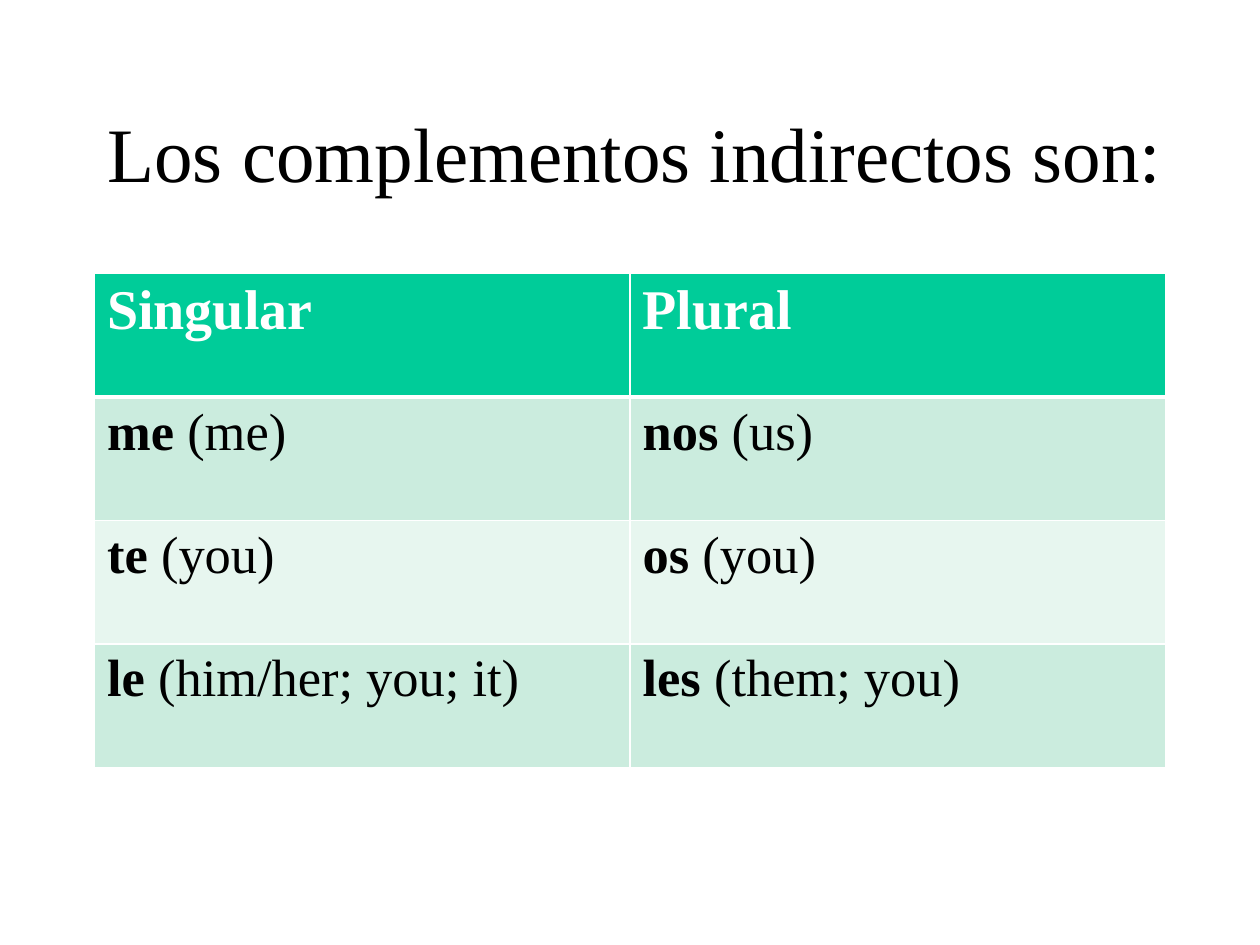
from dataclasses import dataclass

from lxml.etree import SubElement
from pptx import Presentation
from pptx.dml.color import RGBColor
from pptx.enum.text import MSO_ANCHOR, PP_ALIGN
from pptx.oxml.ns import qn
from pptx.table import _Cell
from pptx.text.text import _Paragraph
from pptx.util import Inches, Pt

FONT = "Times New Roman"
WHITE, BLACK = "FFFFFF", "000000"
HEADER_FILL = "00CC99"
BAND_FILLS = ("E7F6EF", "CBECDE")


@dataclass(frozen=True)
class Pronoun:
    spanish: str
    english: str


HEADINGS = ("Singular", "Plural")
PRONOUNS = (
    (Pronoun("me", "(me)"), Pronoun("nos", "(us)")),
    (Pronoun("te", "(you)"), Pronoun("os", "(you)")),
    (Pronoun("le", "(him/her; you; it)"), Pronoun("les", "(them; you)")),
)


def color(value: str) -> RGBColor:
    return RGBColor.from_string(value)


def add_run(paragraph: _Paragraph, text: str, size: float,
            text_color: str = BLACK, bold: bool = False) -> None:
    run = paragraph.add_run()
    run.text = text
    run.font.name = FONT
    run.font.size = Pt(size)
    run.font.bold = bold
    run.font.color.rgb = color(text_color)


def style_cell(cell: _Cell, fill: str, top: float, bottom: float) -> None:
    properties = cell._tc.get_or_add_tcPr()
    for side, width in (("L", 1), ("R", 1), ("T", top), ("B", bottom)):
        line = SubElement(properties, qn(f"a:ln{side}"), w=str(Pt(width)))
        SubElement(SubElement(line, qn("a:solidFill")), qn("a:srgbClr"), val=WHITE)
    cell.fill.solid()
    cell.fill.fore_color.rgb = color(fill)


def add_title(slide, text: str) -> None:
    shape = slide.shapes.add_textbox(Inches(0.58), Inches(0.58), Inches(8.92), Inches(1.25))
    frame = shape.text_frame
    frame.word_wrap = True
    frame.vertical_anchor = MSO_ANCHOR.MIDDLE
    paragraph = frame.paragraphs[0]
    paragraph.alignment = PP_ALIGN.CENTER
    add_run(paragraph, text, 44)


def add_pronoun_table(slide) -> None:
    table = slide.shapes.add_table(
        len(PRONOUNS) + 1, len(HEADINGS),
        Inches(0.75), Inches(2.17), Inches(8.5), Inches(3.92),
    ).table
    for column, heading in enumerate(HEADINGS):
        cell = table.cell(0, column)
        style_cell(cell, HEADER_FILL, 1, 3)
        add_run(cell.text_frame.paragraphs[0], heading, 32, WHITE, True)
    for row, pronouns in enumerate(PRONOUNS, start=1):
        for column, pronoun in enumerate(pronouns):
            cell = table.cell(row, column)
            style_cell(cell, BAND_FILLS[row % 2], 3 if row == 1 else 1, 1)
            paragraph = cell.text_frame.paragraphs[0]
            add_run(paragraph, f"{pronoun.spanish} ", 30, bold=True)
            add_run(paragraph, pronoun.english, 30)


def main() -> None:
    presentation = Presentation()
    presentation.slide_width = Inches(10)
    presentation.slide_height = Inches(7.5)
    slide = presentation.slides.add_slide(presentation.slide_layouts[6])
    slide.background.fill.solid()
    slide.background.fill.fore_color.rgb = color(WHITE)
    add_title(slide, "Los complementos indirectos son:")
    add_pronoun_table(slide)
    presentation.save("out.pptx")


if __name__ == "__main__":
    main()
